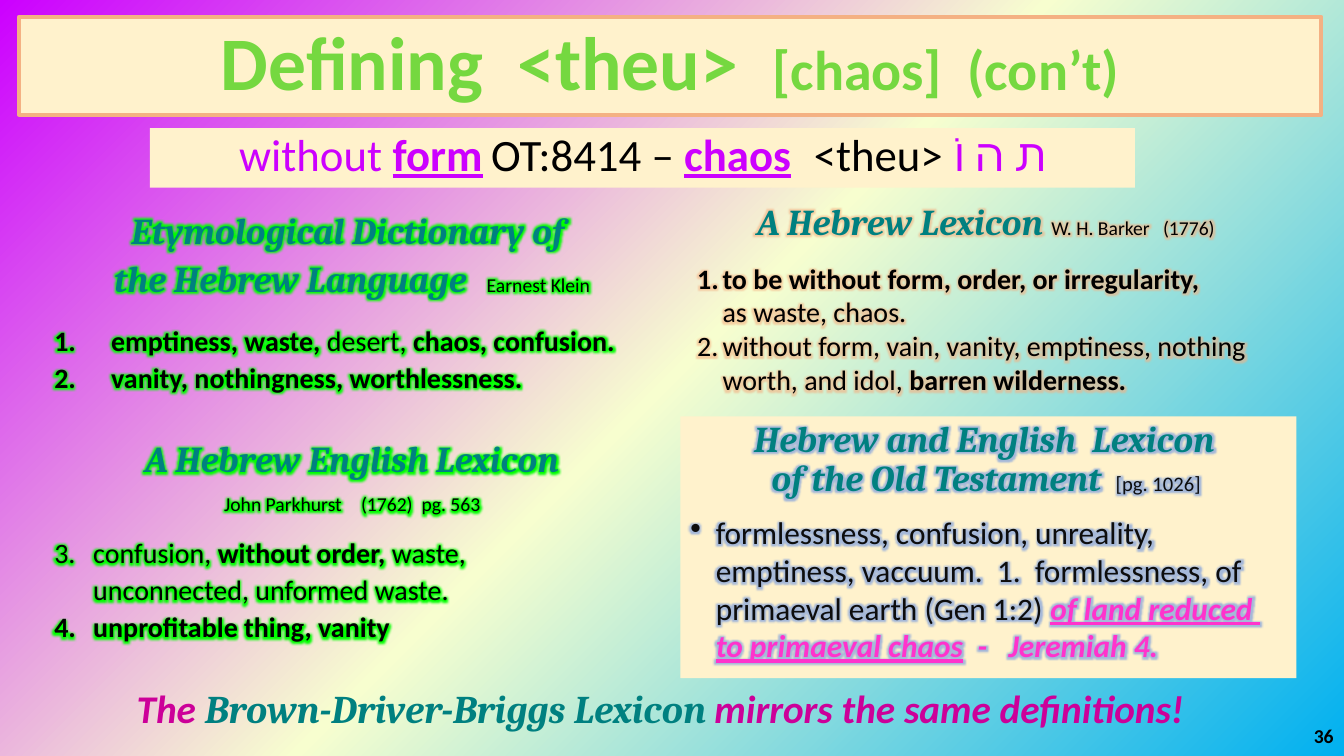
import pptx
import pptx.util
import pptx.dml.color
import pptx.enum.shapes
import pptx.enum.text
import pptx.oxml
import pptx.oxml.ns
from lxml import etree

Cm = pptx.util.Cm
Pt = pptx.util.Pt
RGBColor = pptx.dml.color.RGBColor
ALIGN = pptx.enum.text.PP_ALIGN
ANCHOR = pptx.enum.text.MSO_ANCHOR
qn = pptx.oxml.ns.qn

CREAM = RGBColor(0xFF, 0xF2, 0xCC)
PEACH = RGBColor(0xF4, 0xB1, 0x83)
LEAF = RGBColor(0x75, 0xD8, 0x40)
TEAL = RGBColor(0x00, 0x80, 0x80)
VIOLET = RGBColor(0xCC, 0x00, 0xFF)
MAGENTA = RGBColor(0xCC, 0x00, 0x99)
PINK = RGBColor(0xFF, 0x33, 0xCC)
BLACK = RGBColor(0x00, 0x00, 0x00)
CHARCOAL = RGBColor(0x0D, 0x0D, 0x0D)
GREEN = RGBColor(0x00, 0xFF, 0x00)
PERIWINKLE = RGBColor(0x8F, 0xAA, 0xDC)
SKY = RGBColor(0x00, 0xB0, 0xF0)
PALE = RGBColor(0xF7, 0xFE, 0xCF)


def plain(text, size, color=BLACK, **marks):
    return dict(text=text, size=size, color=color, name="Calibri", **marks)


def strong(text, size, color=BLACK, **marks):
    return plain(text, size, color, bold=True, **marks)


def book(text, size=26):
    return dict(text=text, size=size, color=TEAL, name="Cambria", bold=True, italic=True)


class SlideBuilder:
    def __init__(self, slide):
        self.slide = slide

    def background(self, stops):
        stop_xml = "".join(
            f'<a:gs pos="{position * 1000}"><a:srgbClr val="{color}"/></a:gs>'
            for position, color in stops
        )
        background = pptx.oxml.parse_xml(
            f'<p:bg {pptx.oxml.ns.nsdecls("p", "a")}><p:bgPr><a:gradFill rotWithShape="1">'
            f'<a:gsLst>{stop_xml}</a:gsLst><a:path path="circle">'
            '<a:fillToRect l="100000" t="100000"/></a:path></a:gradFill>'
            "<a:effectLst/></p:bgPr></p:bg>"
        )
        self.slide.element.cSld.insert(0, background)

    def panel(self, box, border=None):
        shape = self.slide.shapes.add_shape(
            pptx.enum.shapes.MSO_SHAPE.RECTANGLE, *(Cm(length) for length in box)
        )
        shape.shadow.inherit = False
        shape.fill.solid()
        shape.fill.fore_color.rgb = CREAM
        if border is None:
            shape.line.fill.background()
        else:
            shape.line.color.rgb = border
            shape.line.width = Pt(3)
        return self.frame(shape, ANCHOR.TOP)

    def text_box(self, box, anchor=ANCHOR.TOP):
        return self.frame(
            self.slide.shapes.add_textbox(*(Cm(length) for length in box)), anchor
        )

    def frame(self, shape, anchor):
        shape.text_frame.word_wrap = True
        shape.text_frame.vertical_anchor = anchor
        return shape.text_frame

    def paragraph(self, frame, runs, align=ALIGN.LEFT, spacing=1.0, before=0,
                  indent=None, bullet=None, glow=None):
        paragraph = frame.paragraphs[0]
        if paragraph.runs:
            paragraph = frame.add_paragraph()
        paragraph.alignment = align
        paragraph.line_spacing = spacing
        paragraph.space_before = Pt(before)
        if bullet:
            properties = paragraph._p.get_or_add_pPr()
            properties.set("marL", str(Cm(indent)))
            properties.set("indent", str(-Cm(indent)))
            if bullet == "1.":
                etree.SubElement(properties, qn("a:buAutoNum"), type="arabicPeriod")
            else:
                etree.SubElement(properties, qn("a:buChar"), char=bullet)
        for style in runs:
            for index, line in enumerate(style["text"].split("\n")):
                if index:
                    paragraph.add_line_break()
                self.run(paragraph, line, style, glow)

    def run(self, paragraph, text, style, glow):
        run = paragraph.add_run()
        run.text = text
        font = run.font
        font.size = Pt(style["size"])
        font.name = style["name"]
        font.bold = style.get("bold", False)
        font.italic = style.get("italic", False)
        font.underline = style.get("underline", False)
        font.color.rgb = style["color"]
        if glow:
            color, alpha = glow
            font._element.find(qn("a:solidFill")).addnext(pptx.oxml.parse_xml(
                f'<a:effectLst {pptx.oxml.ns.nsdecls("a")}><a:glow rad="{Pt(8)}">'
                f'<a:srgbClr val="{color}"><a:alpha val="{alpha * 1000}"/></a:srgbClr>'
                "</a:glow></a:effectLst>"
            ))


def main():
    presentation = pptx.Presentation()
    presentation.slide_width = Cm(33.87)
    presentation.slide_height = Cm(19.05)
    builder = SlideBuilder(presentation.slides.add_slide(presentation.slide_layouts[6]))
    builder.background([(0, SKY), (50, PALE), (100, VIOLET)])

    title = builder.panel((0.48, 0.43, 32.82, 2.46), PEACH)
    title.vertical_anchor = ANCHOR.MIDDLE
    builder.paragraph(title, [
        strong("Defining  <theu>  ", 54, LEAF), strong("[chaos]  (con’t)", 40, LEAF),
    ], ALIGN.CENTER, 0.9)

    banner = builder.panel((3.78, 3.23, 24.82, 1.5))
    builder.paragraph(banner, [
        plain("without ", 32, VIOLET),
        strong("form", 32, VIOLET, underline=True),
        plain("\tOT:8414 – ", 32),
        strong("chaos", 32, VIOLET, underline=True),
        plain("\t  <theu>\t", 32),
        plain(" ת ה וֹ", 32, VIOLET),
    ], ALIGN.CENTER, 0.9)

    green_glow = (GREEN, 100)
    left = builder.text_box((1.12, 5, 15.52, 13))
    builder.paragraph(left, [
        book("Etymological Dictionary of \nthe Hebrew Language"),
        book("    ", 16), plain("Earnest Klein", 14),
    ], ALIGN.CENTER, 1.1, glow=green_glow)
    klein_entries = [
        [strong("emptiness, waste, ", 20), plain("desert, ", 20),
         strong("chaos, confusion.", 20)],
        [strong("vanity, nothingness, worthlessness.", 20)],
    ]
    for entry, before in zip(klein_entries, (15, 0)):
        builder.paragraph(left, entry, spacing=1.1, before=before, indent=1.43,
                          bullet="1.", glow=green_glow)
    builder.paragraph(left, [
        book("A Hebrew English Lexicon\n"), plain("John Parkhurst", 14),
        plain("   ", 20), plain("(1762)  pg. 563", 14),
    ], ALIGN.CENTER, 1.1, before=27, glow=green_glow)
    parkhurst_entries = [
        [plain("confusion, ", 20), strong("without order, ", 20),
         plain("waste,\nunconnected, unformed waste.", 20)],
        [strong("unprofitable thing, vanity", 20)],
    ]
    for entry, before in zip(parkhurst_entries, (11, 0)):
        builder.paragraph(left, entry, spacing=1.1, before=before, indent=0.98,
                          bullet="1.", glow=green_glow)

    peach_glow = (PEACH, 60)
    barker = builder.text_box((17.32, 4.9, 15.06, 5.26))
    builder.paragraph(barker, [
        book("A Hebrew Lexicon "), plain("W. H. Barker   (1776)", 14),
    ], ALIGN.CENTER, glow=peach_glow)
    barker_entries = [
        [strong("to be without form, order, or irregularity, \n", 20),
         plain("as waste, chaos.", 20)],
        [plain("without form, vain, vanity, emptiness, nothing worth, and idol, ", 20),
         strong("barren wilderness.", 20)],
    ]
    for entry, before in zip(barker_entries, (13, 0)):
        builder.paragraph(barker, entry, before=before, indent=0.64,
                          bullet="1.", glow=peach_glow)

    blue_glow = (PERIWINKLE, 80)
    testament = builder.panel((17.15, 10.49, 15.52, 6.6))
    builder.paragraph(testament, [
        book("Hebrew and English  Lexicon \nof the Old Testament", 25.9),
        book("  ", 23.8), plain("[pg. 1026] ", 14.7, CHARCOAL),
    ], ALIGN.CENTER, 0.9, glow=blue_glow)
    builder.paragraph(testament, [
        plain("formlessness, confusion, unreality, emptiness, vaccuum.  1.  "
              "formlessness, of primaeval earth (Gen 1:2) ", 22.4, CHARCOAL),
        strong("of land reduced \nto primaeval chaos", 22.4, PINK,
               italic=True, underline=True),
        strong("  -   Jeremiah 4.", 22.4, PINK, italic=True),
    ], before=10, indent=0.64, bullet="•", glow=blue_glow)

    closing = builder.text_box((0.51, 17.25, 32.26, 1.5))
    builder.paragraph(closing, [
        strong("The ", 28, MAGENTA, italic=True),
        book("Brown-Driver-Briggs Lexicon ", 28),
        strong("mirrors the same definitions!", 28, MAGENTA, italic=True),
    ], ALIGN.CENTER, 0.9)

    page_number = builder.text_box((26.24, 18.03, 7.62, 1.02), ANCHOR.MIDDLE)
    builder.paragraph(page_number, [strong("36", 14)], ALIGN.RIGHT)

    presentation.save("out.pptx")


if __name__ == "__main__":
    main()
